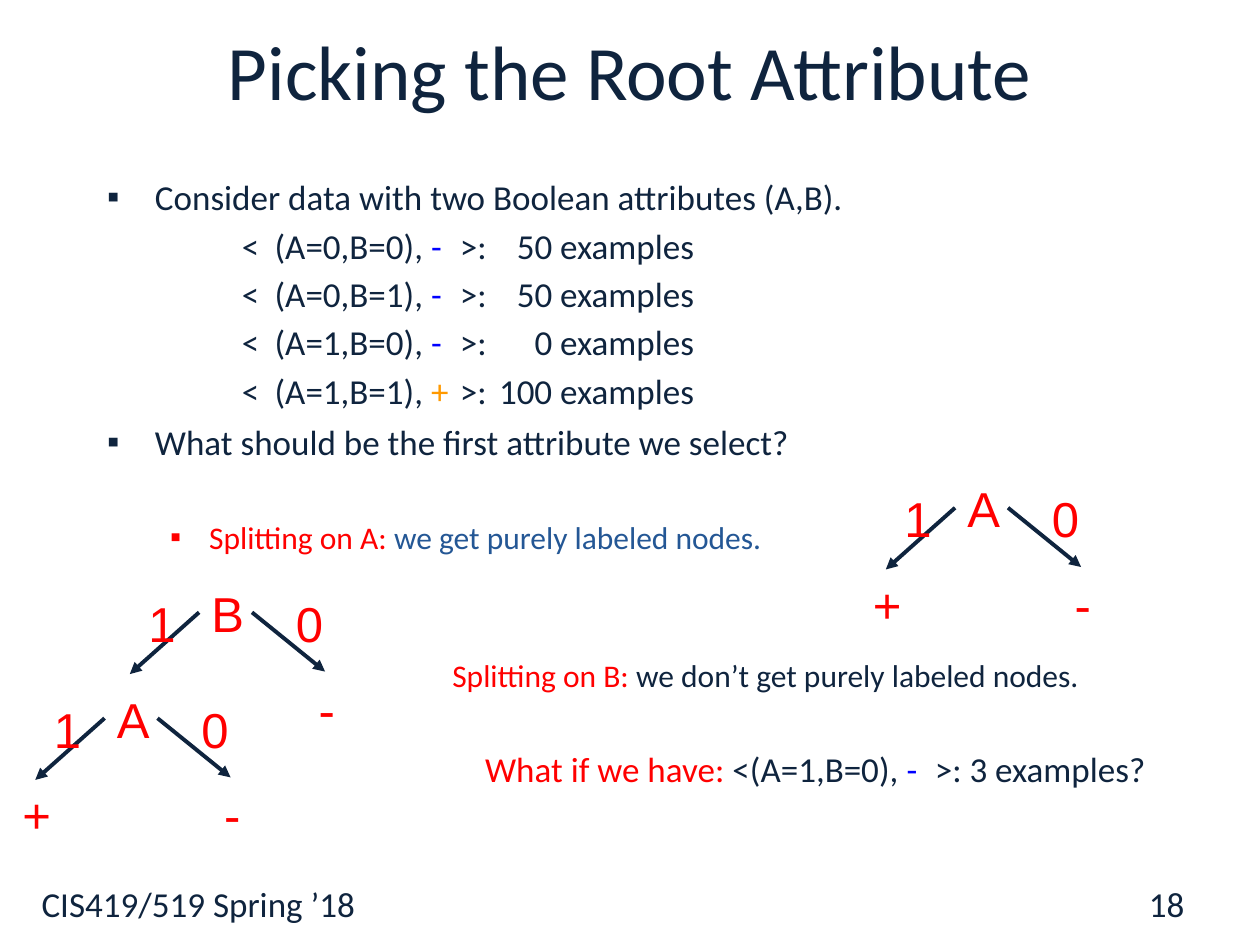
from lxml.etree import SubElement
from pptx import Presentation
from pptx.dml.color import RGBColor
from pptx.enum.shapes import MSO_CONNECTOR
from pptx.enum.text import MSO_ANCHOR, PP_ALIGN
from pptx.oxml.ns import qn
from pptx.util import Inches, Pt

NAVY, RED, BLUE, ORANGE, STEEL = "0F243E", "FF0000", "0000FF", "FF9900", "245795"

TITLE = "Picking the Root Attribute"
EXAMPLES = [("0", "0", "-", 50), ("0", "1", "-", 50), ("1", "0", "-", 0), ("1", "1", "+", 100)]
SIGN_COLORS = {"-": BLUE, "+": ORANGE}
EXAMPLE_LINES = [
    [(f"<\t(A={a},B={b}), ", NAVY), (sign, SIGN_COLORS[sign]), (f"\t>:\t{count} examples", NAVY)]
    for a, b, sign, count in EXAMPLES
]
EXAMPLE_TABS = [(0.26, "l"), (1.73, "l"), (3.59, "r")]

# Each block: left, top, width, text size, lines of (text, colour) runs, options
BLOCKS = [
    (0.85, 1.39, 8.3, 20, [[("Consider data with two Boolean attributes (A,B).", NAVY)]],
     {"bullet_indent": 0.38}),
    (1.92, 1.78, 5, 20, EXAMPLE_LINES, {"tabs": EXAMPLE_TABS}),
    (0.85, 3.34, 8.3, 20, [[("What should be the first attribute we select?", NAVY)]],
     {"bullet_indent": 0.38}),
    (1.35, 4.11, 5.4, 18,
     [[("Splitting on A: ", RED), ("we get purely labeled nodes.", STEEL)]],
     {"bullet_indent": 0.31}),
    (3.59, 5.21, 5.7, 18,
     [[("Splitting on B:", RED), (" we don’t get purely labeled nodes.", NAVY)]], {}),
    (3.85, 5.93, 5.6, 20,
     [[("What if we have:", RED), (" <(A=1,B=0), ", NAVY), ("-", BLUE),
       ("\t>: 3 examples?", NAVY)]], {"tabs": [(3.57, "l")]}),
    (0.33, 7, 5, 20, [[("CIS419/519 Spring ’18", NAVY)]], {}),
    (7.4, 7, 2, 20, [[("18", NAVY)]], {"align": PP_ALIGN.RIGHT}),
]

# A tree is (attribute, branch for 1, branch for 0); a leaf is its label
TREE_A = ("A", "+", "-")
TREE_B = ("B", TREE_A, "-")
TREES = [(7.58, 3.75, TREE_A), (1.58, 4.58, TREE_B)]

LABEL_WIDTHS = {"A": 0.41, "B": 0.41, "+": 0.39, "-": 0.31, "0": 0.38, "1": 0.38}
LABEL_HEIGHT = 0.57
# Per branch, relative to the node: value label, arrow start, arrow end, child
BRANCHES = [
    ("1", (-0.5, 0.08), (0, 0.28), (-0.55, 0.77), (-0.75, 0.84)),
    ("0", (0.67, 0.08), (0.42, 0.28), (1, 0.75), (0.85, 0.84)),
]
LEAF_RISE = 0.08


def rgb(color):
    return RGBColor.from_string(color)


def style(font, size, color, name="Calibri"):
    font.size, font.name, font.color.rgb = Pt(size), name, rgb(color)


def add_bullet(paragraph, indent):
    properties = paragraph._p.get_or_add_pPr()
    properties.set("marL", str(Inches(indent)))
    properties.set("indent", str(-Inches(indent)))
    SubElement(properties, qn("a:buFont"), typeface="Arial")
    SubElement(properties, qn("a:buChar"), char="▪")


def add_tabs(paragraph, tabs):
    tab_list = SubElement(paragraph._p.get_or_add_pPr(), qn("a:tabLst"))
    for position, align in tabs:
        SubElement(tab_list, qn("a:tab"), pos=str(Inches(position)), algn=align)


def add_block(slide, left, top, width, size, lines, options):
    height = len(lines) * 0.39
    box = slide.shapes.add_textbox(Inches(left), Inches(top), Inches(width), Inches(height))
    frame = box.text_frame
    frame.word_wrap = True
    frame.margin_left = frame.margin_right = frame.margin_top = frame.margin_bottom = 0
    for index, runs in enumerate(lines):
        paragraph = frame.add_paragraph() if index else frame.paragraphs[0]
        if "bullet_indent" in options:
            add_bullet(paragraph, options["bullet_indent"])
        if "tabs" in options:
            add_tabs(paragraph, options["tabs"])
        paragraph.alignment = options.get("align", PP_ALIGN.LEFT)
        if index:
            paragraph.space_before = Pt(3.6)
        for text, color in runs:
            run = paragraph.add_run()
            run.text = text
            style(run.font, size, color)


def add_label(slide, text, left, top):
    box = slide.shapes.add_textbox(
        Inches(left), Inches(top), Inches(LABEL_WIDTHS[text]), Inches(LABEL_HEIGHT))
    frame = box.text_frame
    frame.word_wrap = False
    frame.text = text
    style(frame.paragraphs[0].runs[0].font, 28, RED, "Arial")


def add_arrow(slide, start, end):
    points = [Inches(value) for value in (*start, *end)]
    arrow = slide.shapes.add_connector(MSO_CONNECTOR.STRAIGHT, *points)
    arrow.line.color.rgb = rgb(NAVY)
    arrow.line.width = Pt(2.25)
    SubElement(arrow.line._get_or_add_ln(), qn("a:tailEnd"), type="triangle")
    SubElement(arrow._element.spPr, qn("a:effectLst"))


def add_tree(slide, left, top, tree):
    """Draw the node at (left, top) and its branches below it, recursively."""
    attribute, *children = tree
    add_label(slide, attribute, left, top)
    for child, (value, *offsets) in zip(children, BRANCHES):
        label, start, end, below = [(left + x, top + y) for x, y in offsets]
        add_arrow(slide, start, end)
        add_label(slide, value, *label)
        if isinstance(child, tuple):
            add_tree(slide, *below, child)
        else:
            add_label(slide, child, below[0], below[1] - LEAF_RISE)


def main():
    presentation = Presentation()
    presentation.slide_width, presentation.slide_height = Inches(10), Inches(7.5)
    slide = presentation.slides.add_slide(presentation.slide_layouts[5])

    title = slide.shapes.title
    title.left, title.top = Inches(0.75), Inches(0.03)
    title.width, title.height = Inches(8.5), Inches(1.05)
    title.text_frame.text = TITLE
    title.text_frame.vertical_anchor = MSO_ANCHOR.MIDDLE
    title.text_frame.paragraphs[0].alignment = PP_ALIGN.CENTER
    style(title.text_frame.paragraphs[0].runs[0].font, 44, NAVY)

    for block in BLOCKS:
        add_block(slide, *block)
    for tree in TREES:
        add_tree(slide, *tree)
    presentation.save("out.pptx")


if __name__ == "__main__":
    main()
